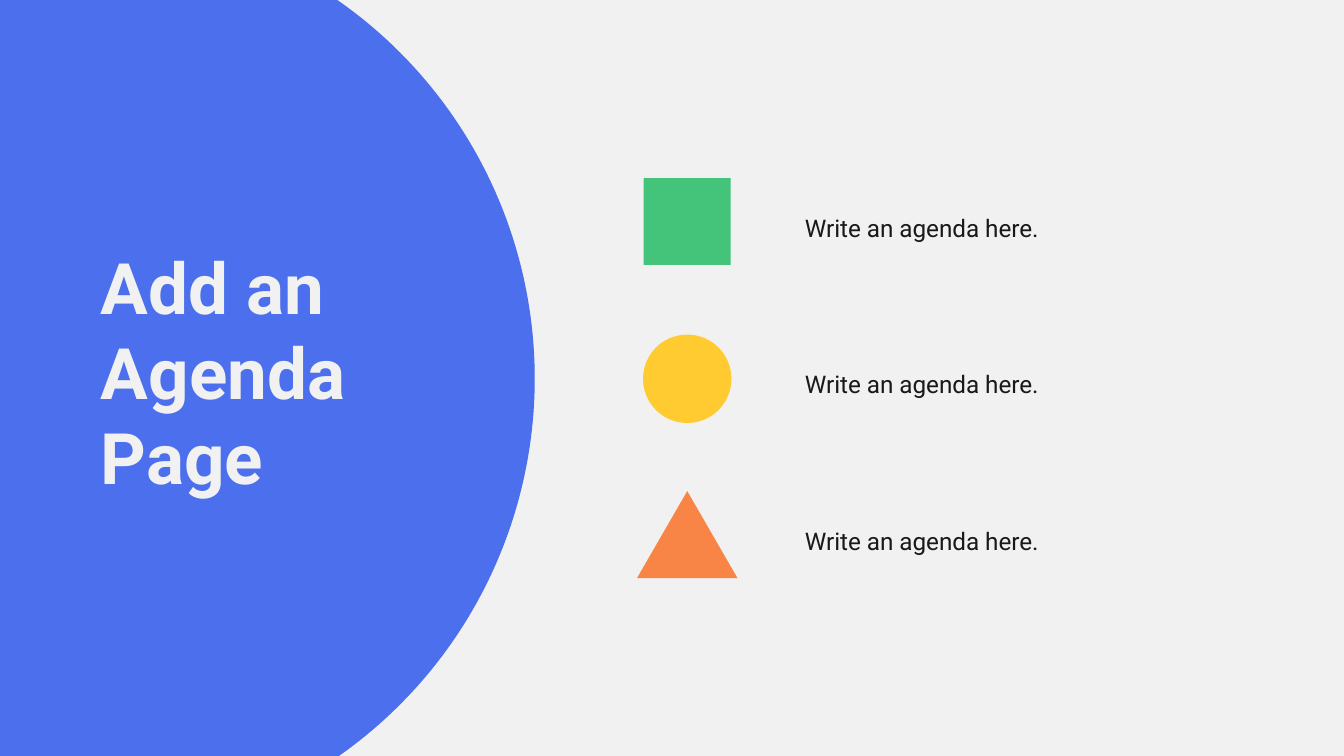
from dataclasses import dataclass

from pptx import Presentation
from pptx.dml.color import RGBColor as Color
from pptx.enum.shapes import MSO_SHAPE as Shape
from pptx.enum.text import MSO_AUTO_SIZE as AutoSize
from pptx.util import Pt


@dataclass(frozen=True)
class Theme:
    font: str = "Roboto"
    background: str = "F1F1F1"
    blue: str = "4B6FED"
    green: str = "43C47A"
    yellow: str = "FFCB30"
    orange: str = "F88545"
    ink: str = "191919"
    title_size: int = 38
    body_size: int = 13


THEME = Theme()
ROW_PITCH = 83.85
ICON_TOP = 95.4
ICON_CENTER = 368.2
TEXT_TOP = 108


def add_figure(slide, kind, left, top, width, height, color):
    shape = slide.shapes.add_shape(kind, Pt(left), Pt(top), Pt(width), Pt(height))
    shape.shadow.inherit = False
    shape.fill.solid()
    shape.fill.fore_color.rgb = Color.from_string(color)
    shape.line.fill.background()


def add_text(slide, text, left, top, width, height, size, color, bold=False, spacing=None):
    box = slide.shapes.add_textbox(Pt(left), Pt(top), Pt(width), Pt(height))
    frame = box.text_frame
    frame.word_wrap = True
    frame.auto_size = AutoSize.SHAPE_TO_FIT_TEXT
    frame.margin_left = frame.margin_right = frame.margin_top = frame.margin_bottom = 0
    paragraph = frame.paragraphs[0]
    paragraph.text = text
    paragraph.line_spacing = spacing
    paragraph.font.name = THEME.font
    paragraph.font.size = Pt(size)
    paragraph.font.bold = bold
    paragraph.font.color.rgb = Color.from_string(color)


def add_agenda_row(slide, index, kind, width, height, color):
    offset = index * ROW_PITCH
    add_figure(slide, kind, ICON_CENTER - width / 2, ICON_TOP + offset, width, height, color)
    add_text(slide, "Write an agenda here.", 431.2, TEXT_TOP + offset, 222, 16,
             THEME.body_size, THEME.ink, spacing=1.4)


def main():
    presentation = Presentation()
    presentation.slide_width = Pt(720)
    presentation.slide_height = Pt(405)
    slide = presentation.slides.add_slide(presentation.slide_layouts[6])
    slide.background.fill.solid()
    slide.background.fill.fore_color.rgb = Color.from_string(THEME.background)

    add_figure(slide, Shape.OVAL, -205.3, -44, 491.8, 493.6, THEME.blue)
    add_text(slide, "Add an Agenda Page", 54, 130.5, 180, 138,
             THEME.title_size, THEME.background, bold=True)

    icons = [
        (Shape.RECTANGLE, 46.6, 46.6, THEME.green),
        (Shape.OVAL, 47.4, 47.4, THEME.yellow),
        (Shape.ISOSCELES_TRIANGLE, 53.8, 46.6, THEME.orange),
    ]
    for index, icon in enumerate(icons):
        add_agenda_row(slide, index, *icon)

    presentation.save("out.pptx")


if __name__ == "__main__":
    main()
